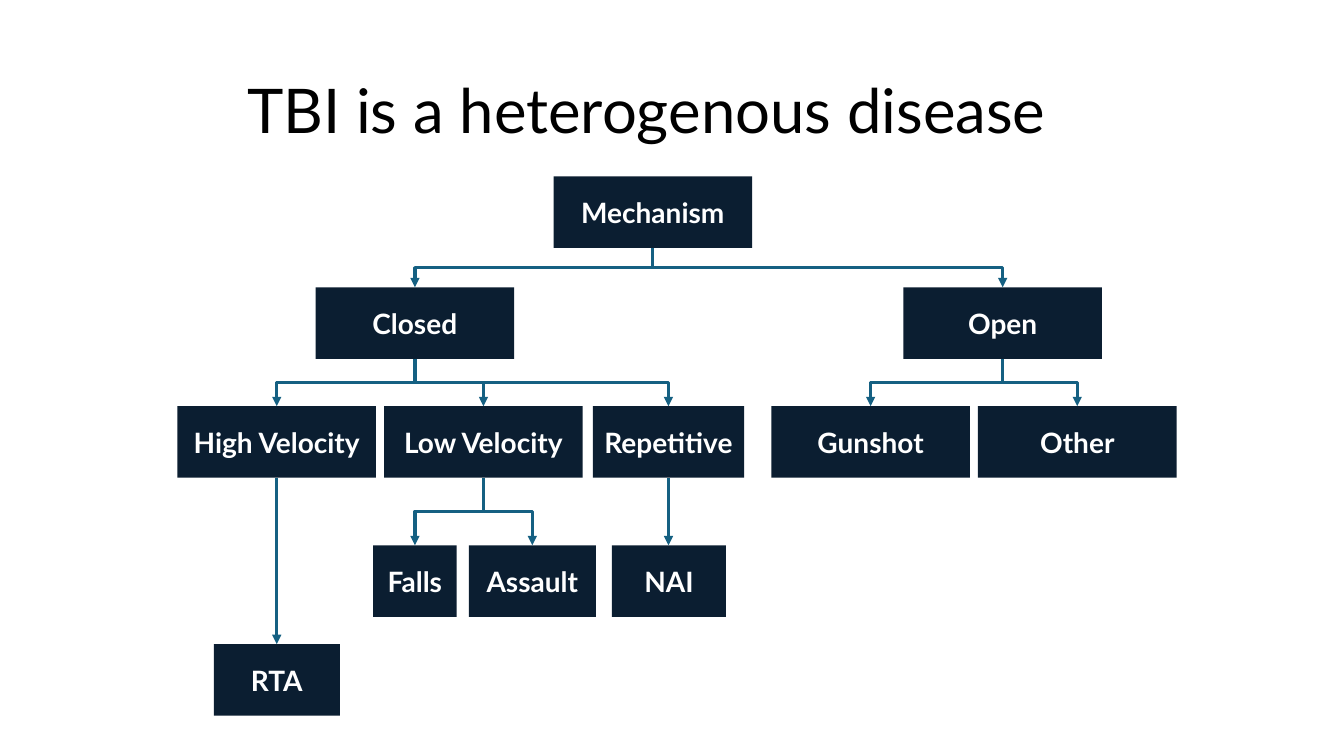
from lxml import etree
from pptx import Presentation
from pptx import util as u
from pptx.dml.color import RGBColor
from pptx.enum import shapes, text
from pptx.oxml import ns

PX = 9144
COLORS = {"box": "0B1E31", "label": "FFFFFF", "arrow": "156082", "title": "000000"}
FONT = "Lato"
BOX_H = 71
ROWS = [175, 285, 403, 541, 639]

NODES = [
    ("Mechanism", 0, 549, 197, None),
    ("Closed", 1, 313, 197, "Mechanism"),
    ("Open", 1, 896, 197, "Mechanism"),
    ("High Velocity", 2, 176, 197, "Closed"),
    ("Low Velocity", 2, 381, 197, "Closed"),
    ("Repetitive", 2, 588, 150, "Closed"),
    ("Gunshot", 2, 765, 197, "Open"),
    ("Other", 2, 970, 197, "Open"),
    ("Falls", 3, 370, 83, "Low Velocity"),
    ("Assault", 3, 465, 126, "Low Velocity"),
    ("NAI", 3, 607, 113, "Repetitive"),
    ("RTA", 4, 212, 125, "High Velocity"),
]


def rgb(name):
    return RGBColor.from_string(COLORS[name])


def style_text(tf, size, color, align, bold):
    tf.vertical_anchor = text.MSO_ANCHOR.MIDDLE
    p = tf.paragraphs[0]
    p.alignment = align
    font = p.runs[0].font
    font.name, font.size, font.bold = FONT, u.Pt(size), bold
    font.color.rgb = rgb(color)


prs = Presentation()
prs.slide_width, prs.slide_height = 1333 * PX, 750 * PX
s = prs.slides.add_slide(prs.slide_layouts[5])

title = s.shapes.title
title.left, title.top, title.width, title.height = 235 * PX, 40 * PX, 862 * PX, 145 * PX
title.text_frame.text = "TBI is a heterogenous disease"
title.text_frame.auto_size = text.MSO_AUTO_SIZE.NONE
style_text(title.text_frame, 44, "title", text.PP_ALIGN.LEFT, False)
title.text_frame.paragraphs[0].line_spacing = 0.9

boxes = {}
for label, row, left, width, parent in NODES:
    sp = s.shapes.add_shape(shapes.MSO_SHAPE.RECTANGLE, left * PX, ROWS[row] * PX, width * PX, BOX_H * PX)
    sp.shadow.inherit = False
    sp.fill.solid()
    sp.fill.fore_color.rgb = rgb("box")
    sp.line.fill.background()
    tf = sp.text_frame
    tf.text = label
    tf.word_wrap = True
    tf.margin_left = tf.margin_right = 5 * PX
    style_text(tf, 20, "label", text.PP_ALIGN.CENTER, True)
    boxes[label] = sp

for label, row, left, width, parent in NODES:
    if parent is None:
        continue
    start, end = boxes[parent], boxes[label]
    x1, y1 = start.left + start.width // 2, start.top + start.height
    x2, y2 = end.left + end.width // 2, end.top
    if abs(x2 - x1) <= PX:
        x2 = x1
    arrow = s.shapes.add_connector(shapes.MSO_CONNECTOR.ELBOW, x1, y1, x2, y2)
    arrow.begin_connect(start, 2)
    arrow.end_connect(end, 0)
    drop, spread = y2 - y1, abs(x2 - x1)
    arrow.left, arrow.top = (x1 + x2 - drop) // 2, (y1 + y2 - spread) // 2
    arrow.width, arrow.height = drop, spread
    xfrm = arrow._element.spPr.find(ns.qn("a:xfrm"))
    xfrm.set("rot", "16200000" if x2 > x1 else "5400000")
    xfrm.set("flipH", "1" if x2 > x1 else "0")
    xfrm.set("flipV", "0")
    arrow.line.color.rgb = rgb("arrow")
    arrow.line.width = u.Pt(2.25)
    ln = arrow.line._get_or_add_ln()
    etree.SubElement(ln, ns.qn("a:tailEnd"), type="triangle")
    etree.SubElement(arrow._element.spPr, ns.qn("a:effectLst"))

prs.save("out.pptx")
